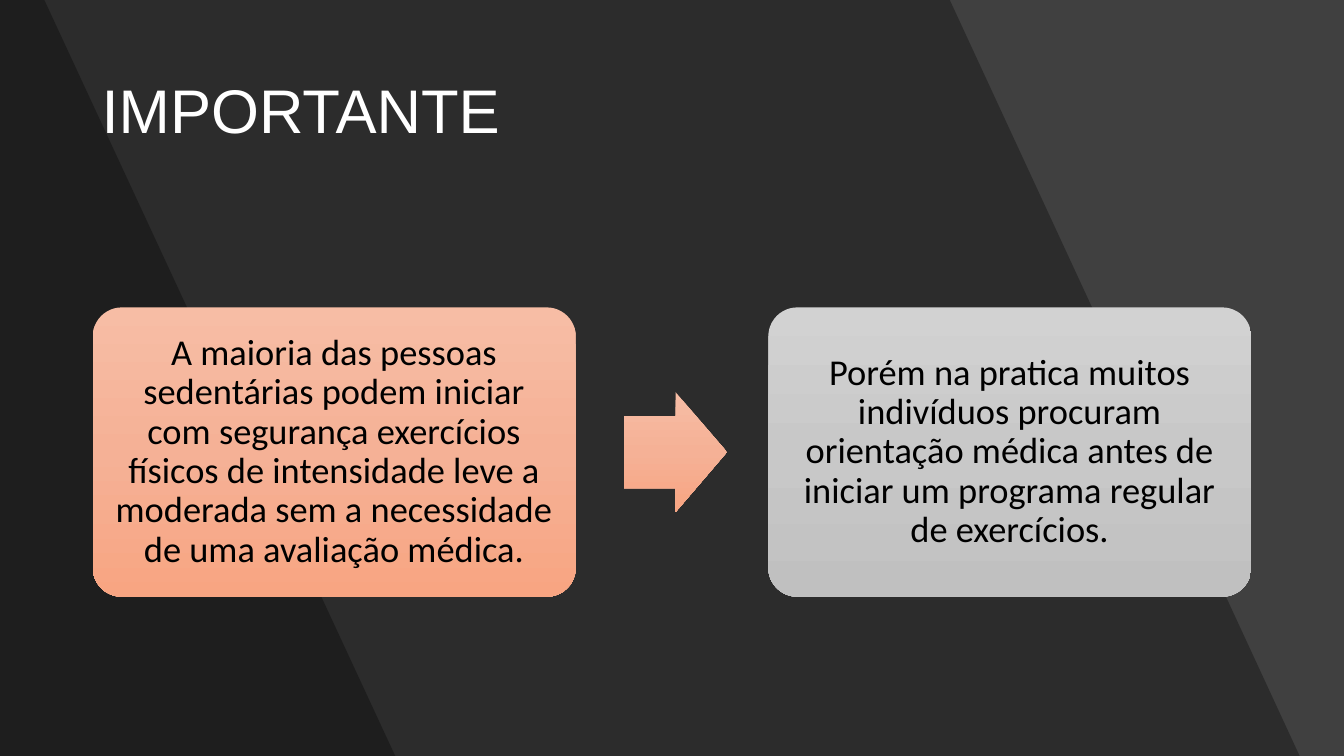
from copy import deepcopy
from dataclasses import dataclass

from pptx import Presentation
from pptx.dml.color import RGBColor
from pptx.enum import shapes, text
from pptx.oxml.ns import qn
from pptx.oxml.xmlchemy import OxmlElement
from pptx.util import Inches, Pt


@dataclass(frozen=True)
class Theme:
    back: str = "404040"
    shade: str = "000000"
    alpha: int = 30
    light: str = "FFFFFF"
    dark: str = "000000"
    peach: tuple = ("F7BDA5", "F5B196", "F8A582")
    gray: tuple = ("D2D2D2", "C8C8C8", "C0C0C0")
    head: tuple = ("Arial", 44)
    body: tuple = ("Calibri", 26)


THEME = Theme()
WIDE, HIGH = 13.33, 7.5
BANDS = ((9.42, 12.89), (0.44, 3.92))  # top and bottom right corners
CLAIM = ("A maioria das pessoas sedentárias podem iniciar com segurança "
         "exercícios físicos de intensidade leve a moderada sem a necessidade "
         "de uma avaliação médica.")
HABIT = ("Porém na pratica muitos indivíduos procuram orientação médica antes "
         "de iniciar um programa regular de exercícios.")


def write(shape, words, font, color, align):
    frame = shape.text_frame
    frame.text = words
    frame.word_wrap = True
    frame.vertical_anchor = text.MSO_ANCHOR.MIDDLE
    para = frame.paragraphs[0]
    para.alignment = align
    para.line_spacing = 0.9
    run = para.runs[0].font
    run.name, run.size = font[0], Pt(font[1])
    run.color.rgb = RGBColor.from_string(color)


def blend(shape, colors):
    """Fill a shape from top to bottom through three colours."""
    shape.shadow.inherit = False
    shape.line.fill.background()
    shape.fill.gradient()
    shape.fill.gradient_angle = 270
    stops = shape._element.spPr.find(".//" + qn("a:gsLst"))
    stops.insert(1, deepcopy(stops[0]))
    for stop, color, place in zip(shape.fill.gradient_stops, colors, (0, 0.5, 1)):
        stop.color.rgb = RGBColor.from_string(color)
        stop.position = place


def backdrop(slide, high):
    """Lay see-through slanted bands over a plain background."""
    fill = slide.background.fill
    fill.solid()
    fill.fore_color.rgb = RGBColor.from_string(THEME.back)
    for top, foot in BANDS:
        pen = slide.shapes.build_freeform(0, 0)
        pen.add_line_segments([(Inches(x), Inches(y)) for x, y in
                               ((top, 0), (foot, high), (0, high))])
        band = pen.convert_to_shape()
        band.shadow.inherit = False
        band.line.fill.background()
        band.fill.solid()
        band.fill.fore_color.rgb = RGBColor.from_string(THEME.shade)
        alpha = OxmlElement("a:alpha")
        alpha.set("val", str(THEME.alpha * 1000))
        band._element.spPr.find(".//" + qn("a:srgbClr")).append(alpha)


def title(slide, box, words):
    label = slide.shapes.add_textbox(*map(Inches, box))
    write(label, words, THEME.head, THEME.light, text.PP_ALIGN.LEFT)


def card(slide, box, words, colors):
    shape = slide.shapes.add_shape(
        shapes.MSO_SHAPE.ROUNDED_RECTANGLE, *map(Inches, box))
    shape.adjustments[0] = 0.1
    blend(shape, colors)
    write(shape, words, THEME.body, THEME.dark, text.PP_ALIGN.CENTER)
    frame = shape.text_frame
    frame.margin_left = frame.margin_right = Inches(0.11)
    frame.margin_top = frame.margin_bottom = Inches(0.11)


def flow(slide, box):
    """Place two cards at the ends of the box and an arrow in the gap."""
    left, top, width, height = box
    wide = 4.79
    card(slide, (left, top, wide, height), CLAIM, THEME.peach)
    long, tall = 1.02, 1.19
    arrow = slide.shapes.add_shape(
        shapes.MSO_SHAPE.RIGHT_ARROW, Inches(left + wide + 0.48),
        Inches(top + (height - tall) / 2), Inches(long), Inches(tall))
    arrow.adjustments[0], arrow.adjustments[1] = 0.6, 0.5
    blend(arrow, THEME.peach)
    card(slide, (left + width - wide, top, wide, height), HABIT, THEME.gray)


def main():
    deck = Presentation()
    deck.slide_width, deck.slide_height = Inches(WIDE), Inches(HIGH)
    slide = deck.slides.add_slide(deck.slide_layouts[6])
    backdrop(slide, HIGH)
    title(slide, (0.91, 0.4, 11.51, 1.45), "IMPORTANTE")
    flow(slide, (0.92, 3.05, 11.49, 2.87))
    deck.save("out.pptx")


if __name__ == "__main__":
    main()
